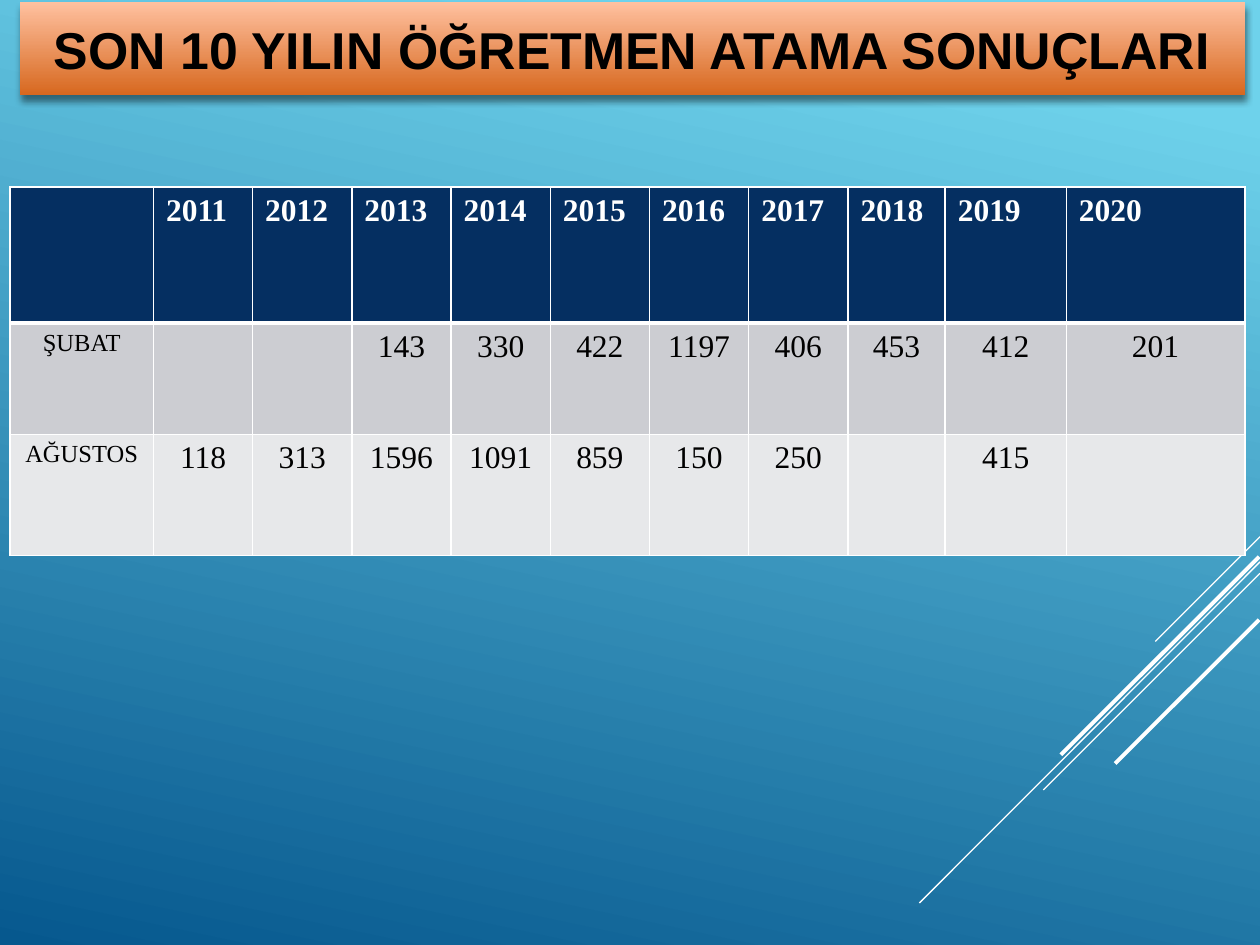
"""Build a one-slide deck with a table of teacher appointments by year."""
from typing import NamedTuple

from lxml import etree
from pptx import Presentation
from pptx import util as u
from pptx.dml.color import RGBColor
from pptx.enum import shapes, text
from pptx.oxml import parse_xml
from pptx.oxml.ns import nsdecls, qn

WHITE, BLACK = "FFFFFF", "000000"
SERIF = "Times New Roman"


class Stroke(NamedTuple):
    start: tuple[float, float]
    end: tuple[float, float]
    weight: float


class Band(NamedTuple):
    label: str
    values: list[str]
    height: float
    fill: str
    color: str
    bold: bool
    align: text.PP_ALIGN
    label_size: float
    top: float
    bottom: float


STROKES = [
    Stroke((720, 306.7), (660.2, 366.5), 0.75),
    Stroke((720, 321.1), (525.4, 516), 0.75),
    Stroke((720, 327.6), (596.2, 451.4), 0.75),
    Stroke((719.5, 318.2), (606.2, 431.3), 2.25),
    Stroke((719.5, 354.2), (637.2, 436.3), 2.25),
]
COLUMNS = [82] + [56.7] * 7 + [55.6, 69.2, 102.1]
BANDS = [
    Band("", [str(year) for year in range(2011, 2021)], 77.8, "052F61", WHITE, True,
         text.PP_ALIGN.LEFT, 18, 1, 3),
    Band("ŞUBAT", ["", "", "143", "330", "422", "1197", "406", "453", "412", "201"],
         63.6, "CCCDD2", BLACK, False, text.PP_ALIGN.CENTER, 14, 3, 1),
    Band("AĞUSTOS", ["118", "313", "1596", "1091", "859", "150", "250", "", "415", ""],
         69.4, "E7E8EA", BLACK, False, text.PP_ALIGN.CENTER, 14, 1, 1),
]


def rgb(value: str) -> RGBColor:
    return RGBColor.from_string(value)


def set_gradient(fill, stops: list[tuple[float, str]], clockwise: float) -> None:
    fill.gradient()
    fill.gradient_angle = 360 - clockwise
    for stop, (position, color) in zip(fill.gradient_stops, stops):
        stop.position = position
        stop.color.rgb = rgb(color)


def add_text(para, words: str, size: float, font: str, color: str, bold: bool) -> None:
    span = para.add_run()
    span.text = words
    span.font.size = u.Pt(size)
    span.font.name = font
    span.font.bold = bold
    span.font.color.rgb = rgb(color)


def draw_stroke(page, stroke: Stroke) -> None:
    ends = [u.Pt(value) for value in (*stroke.start, *stroke.end)]
    line = page.shapes.add_connector(shapes.MSO_CONNECTOR.STRAIGHT, *ends)
    line.line.color.rgb = rgb(WHITE)
    line.line.width = u.Pt(stroke.weight)
    etree.SubElement(line._element.spPr, qn("a:effectLst"))


def draw_title(page) -> None:
    box = page.shapes.add_shape(shapes.MSO_SHAPE.RECTANGLE, u.Pt(11.5), u.Pt(1.2),
                                u.Pt(700), u.Pt(53.3))
    set_gradient(box.fill, [(0, "FFC1A0"), (1, "D7681F")], 90)
    box.line.fill.background()
    box._element.spPr.append(parse_xml(
        f'<a:effectLst {nsdecls("a")}>'
        f'<a:outerShdw blurRad="{u.Pt(4)}" dist="{u.Pt(3)}" dir="5400000" rotWithShape="0">'
        f'<a:srgbClr val="{BLACK}"><a:alpha val="46000"/></a:srgbClr>'
        '</a:outerShdw></a:effectLst>'))
    frame = box.text_frame
    frame.word_wrap = True
    frame.vertical_anchor = text.MSO_ANCHOR.MIDDLE
    para = frame.paragraphs[0]
    para.alignment = text.PP_ALIGN.CENTER
    add_text(para, "SON 10 YILIN ÖĞRETMEN ATAMA SONUÇLARI", 29.6, "Arial", BLACK, True)


def set_borders(cell, top: float, bottom: float) -> None:
    properties = cell._tc.get_or_add_tcPr()
    for side, weight in (("L", 1), ("R", 1), ("T", top), ("B", bottom)):
        properties.append(parse_xml(
            f'<a:ln{side} {nsdecls("a")} w="{u.Pt(weight)}"><a:solidFill>'
            f'<a:srgbClr val="{WHITE}"/></a:solidFill></a:ln{side}>'))


def draw_table(page) -> None:
    heights = [band.height for band in BANDS]
    table = page.shapes.add_table(len(BANDS), len(COLUMNS), u.Pt(5.7), u.Pt(106.8),
                                  u.Pt(sum(COLUMNS)), u.Pt(sum(heights))).table
    for column, width in zip(table.columns, COLUMNS):
        column.width = u.Pt(width)
    for row, band in zip(table.rows, BANDS):
        row.height = u.Pt(band.height)
        for index, (cell, words) in enumerate(zip(row.cells, [band.label, *band.values])):
            set_borders(cell, band.top, band.bottom)
            cell.fill.solid()
            cell.fill.fore_color.rgb = rgb(band.fill)
            para = cell.text_frame.paragraphs[0]
            para.alignment = band.align
            if words:
                size = 18 if index else band.label_size
                add_text(para, words, size, SERIF, band.color, band.bold)


def main() -> None:
    deck = Presentation()
    deck.slide_width, deck.slide_height = u.Pt(720), u.Pt(540)
    page = deck.slides.add_slide(deck.slide_layouts[6])
    set_gradient(page.background.fill, [(0.1, "6ED2EB"), (1, "06588E")], 102)
    for stroke in STROKES:
        draw_stroke(page, stroke)
    draw_title(page)
    draw_table(page)
    deck.save("out.pptx")


if __name__ == "__main__":
    main()
